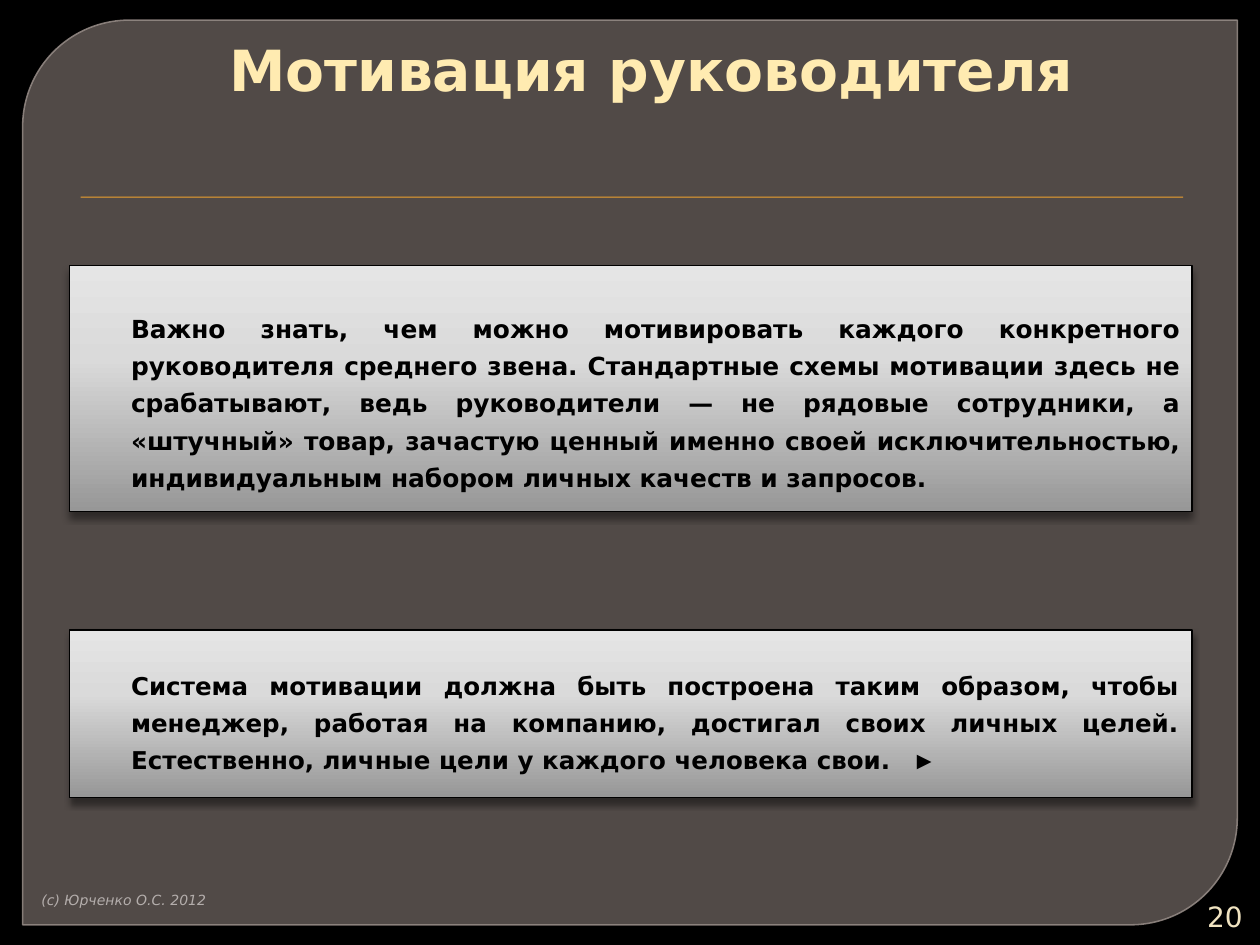
from dataclasses import dataclass

from lxml import etree
from pptx import Presentation
from pptx import util as u
from pptx.dml.color import RGBColor
from pptx.enum import shapes, text
from pptx.oxml import parse_xml
from pptx.oxml.ns import nsdecls, qn

COLUMNS, ROWS = 100, 75
CELL = u.Inches(0.1)

BLACK = RGBColor(0x00, 0x00, 0x00)
PANEL_FILL = RGBColor(0x7D, 0x72, 0x6E)
PANEL_EDGE = RGBColor(0x94, 0x8A, 0x85)
ORANGE = RGBColor(0xF0, 0xA2, 0x2E)
CREAM = RGBColor(0xFF, 0xEB, 0xB1)
PALE_CREAM = RGBColor(0xF0, 0xE3, 0xC0)
GREY = RGBColor(0xB4, 0xAE, 0xAC)
CARD_STOPS = (
    (0, RGBColor(0x97, 0x97, 0x97)),
    (62, RGBColor(0xDA, 0xDA, 0xDA)),
    (100, RGBColor(0xE5, 0xE5, 0xE5)),
)
FONT = "DejaVu Sans"
ARROW_FONT = "Times New Roman"


@dataclass(frozen=True)
class Area:
    """A rectangle in grid columns and rows."""
    column: float
    row: float
    columns: float
    rows: float

    def lengths(self) -> list[int]:
        return [round(n * CELL) for n in (self.column, self.row, self.columns, self.rows)]


@dataclass(frozen=True)
class Card:
    area: Area
    wording: str
    size: float
    top_rows: float
    arrow: str = ""


CARDS = (
    Card(Area(5.5, 21.1, 89.1, 19.5),
         "Важно знать, чем можно мотивировать каждого конкретного руководителя среднего "
         "звена. Стандартные схемы мотивации здесь не срабатывают, ведь руководители — "
         "не рядовые сотрудники, а «штучный» товар, зачастую ценный именно своей "
         "исключительностью, индивидуальным набором личных качеств и запросов.",
         14.2, 3.2),
    Card(Area(5.5, 50, 89.1, 13.3),
         "Система мотивации должна быть построена таким образом, чтобы менеджер, работая "
         "на компанию, достигал своих личных целей. Естественно, личные цели у каждого "
         "человека свои.",
         14, 2.7, arrow="►"),
)


def set_alpha(fill_parent, percent: int) -> None:
    for color in fill_parent.iter(qn("a:srgbClr")):
        etree.SubElement(color, qn("a:alpha"), val=str(percent * 1000))


def add_shadow(shape, opacity: int, blur: float, distance: float) -> None:
    """Drop a black shadow straight down."""
    effects = shape._element.spPr.find(qn("a:effectLst"))
    effects.append(parse_xml(
        f'<a:outerShdw {nsdecls("a")} blurRad="{u.Pt(blur)}" dist="{u.Pt(distance)}" '
        f'dir="5400000" algn="t" rotWithShape="0"><a:srgbClr val="{BLACK}">'
        f'<a:alpha val="{opacity * 1000}"/></a:srgbClr></a:outerShdw>'))


def add_block(slide, kind, area: Area, fill=None, edge=None, width: float = 0.75):
    block = slide.shapes.add_shape(kind, *area.lengths())
    block.shadow.inherit = False
    if fill is not None:
        block.fill.solid()
        block.fill.fore_color.rgb = fill
    if edge is None:
        block.line.fill.background()
    else:
        block.line.color.rgb = edge
        block.line.width = u.Pt(width)
    return block


def add_run(paragraph, wording: str, *, size: float, color: RGBColor, font: str = FONT,
            bold: bool = False, italic: bool = False):
    run = paragraph.add_run()
    run.text = wording
    run.font.name, run.font.size = font, u.Pt(size)
    run.font.bold, run.font.italic = bold, italic
    run.font.color.rgb = color
    return run


def add_label(slide, area: Area, wording: str, *, align=text.PP_ALIGN.LEFT,
              anchor=text.MSO_ANCHOR.TOP, top: float = 0.05, **style) -> None:
    frame = slide.shapes.add_textbox(*area.lengths()).text_frame
    frame.word_wrap = True
    frame.vertical_anchor = anchor
    frame.margin_top = u.Inches(top)
    paragraph = frame.paragraphs[0]
    paragraph.alignment = align
    add_run(paragraph, wording, **style)


def add_card(slide, card: Card) -> None:
    block = add_block(slide, shapes.MSO_SHAPE.RECTANGLE, card.area, edge=BLACK)
    stops = "".join(f'<a:gs pos="{share * 1000}"><a:srgbClr val="{color}"/></a:gs>'
                    for share, color in CARD_STOPS)
    block._element.spPr.find(qn("a:prstGeom")).addnext(parse_xml(
        f'<a:gradFill {nsdecls("a")} rotWithShape="1"><a:gsLst>{stops}</a:gsLst>'
        '<a:lin ang="16200000" scaled="0"/></a:gradFill>'))
    add_shadow(block, 43, 4, 3)

    frame = block.text_frame
    frame.word_wrap = True
    frame.vertical_anchor = text.MSO_ANCHOR.TOP
    frame.margin_left = u.Inches(0.49)
    frame.margin_top = round(card.top_rows * CELL)
    paragraph = frame.paragraphs[0]
    paragraph.alignment = text.PP_ALIGN.JUSTIFY
    paragraph.line_spacing = 1.25
    style = dict(size=card.size, color=BLACK, bold=True)
    add_run(paragraph, card.wording, **style)
    if card.arrow:
        gap = add_run(paragraph, " ", **style)
        gap._r.get_or_add_rPr().set("spc", "700")
        add_run(paragraph, card.arrow, font=ARROW_FONT, **style)


def main() -> None:
    deck = Presentation()
    deck.slide_width, deck.slide_height = COLUMNS * CELL, ROWS * CELL
    slide = deck.slides.add_slide(deck.slide_layouts[6])
    slide.background.fill.solid()
    slide.background.fill.fore_color.rgb = BLACK

    panel = add_block(slide, shapes.MSO_SHAPE.ROUND_2_DIAG_RECTANGLE,
                      Area(1.8, 1.6, 96.4, 71.8), PANEL_FILL, PANEL_EDGE, 0.87)
    panel.adjustments[0], panel.adjustments[1] = 0.118, 0
    properties = panel._element.spPr
    set_alpha(properties.find(qn("a:solidFill")), 65)
    set_alpha(properties.find(qn("a:ln")), 88)

    rule = add_block(slide, shapes.MSO_SHAPE.RECTANGLE, Area(6.4, 15.6, 87.5, 0.1), ORANGE)
    add_shadow(rule, 75, 1, 1)

    add_label(slide, Area(8.1, 2.8, 87.2, 10.5), "Мотивация руководителя", size=32.4,
              color=CREAM, bold=True, align=text.PP_ALIGN.CENTER, top=0)
    for card in CARDS:
        add_card(slide, card)
    add_label(slide, Area(94.5, 71.2, 5.1, 3), "20", size=16, color=PALE_CREAM,
              align=text.PP_ALIGN.RIGHT, anchor=text.MSO_ANCHOR.MIDDLE)
    add_label(slide, Area(2.3, 70.3, 15.6, 3), "(c) Юрченко О.С. 2012", size=8,
              color=GREY, italic=True)

    deck.save("out.pptx")


if __name__ == "__main__":
    main()
